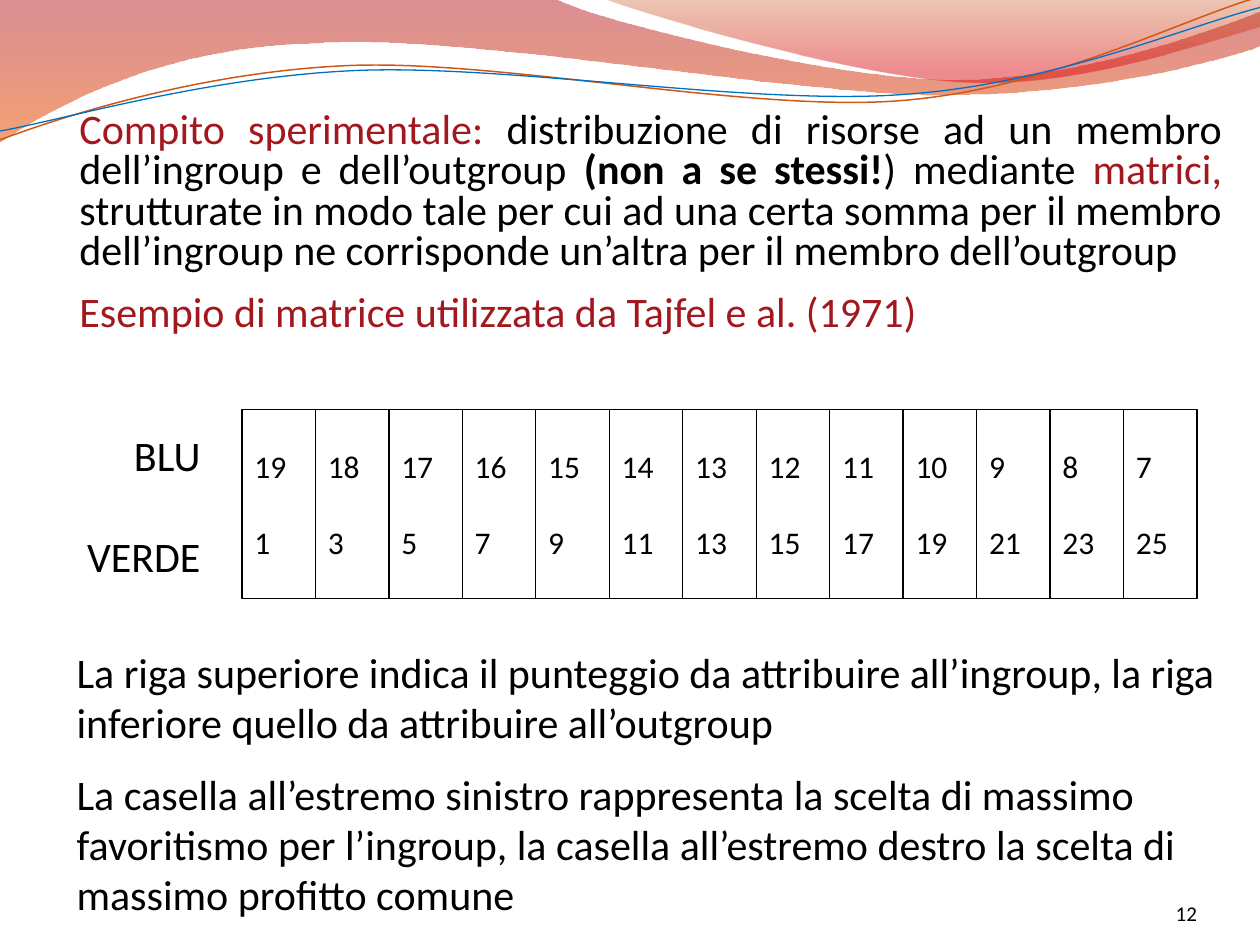
from dataclasses import dataclass
from math import cos, radians, sin

from lxml import etree
from pptx import Presentation
from pptx.dml.color import RGBColor
from pptx.enum.shapes import MSO_SHAPE
from pptx.enum.text import MSO_ANCHOR, MSO_AUTO_SIZE, PP_ALIGN
from pptx.oxml.ns import qn
from pptx.util import Inches, Pt

RECTANGLE = MSO_SHAPE.RECTANGLE
TOP, MIDDLE, BOTTOM = MSO_ANCHOR.TOP, MSO_ANCHOR.MIDDLE, MSO_ANCHOR.BOTTOM
LEFT, RIGHT, JUSTIFY = PP_ALIGN.LEFT, PP_ALIGN.RIGHT, PP_ALIGN.JUSTIFY
NO_AUTOFIT = MSO_AUTO_SIZE.NONE


@dataclass(frozen=True)
class Theme:
    font: str = "Calibri"
    ink: str = "000000"
    accent: str = "A3171E"
    wave_orange: str = "CF5818"
    wave_blue: str = "0070C0"
    body_size: int = 24
    cell_size: int = 18
    number_size: int = 12


THEME = Theme()
WAVE_TILT = 2.7

BAND = [(0, 0), (4.4, -0.01),
        (4.76, 0.17, 6.64, 0.63, 7.58, 0.63), (8.53, 0.63, 9.58, 0.26, 10, 0.09),
        (10.01, 0.36),
        (9.83, 0.44, 8.7, 0.76, 7.46, 0.75), (6.22, 0.75, 3.82, 0.28, 2.57, 0.34),
        (1.29, 0.36, 0.46, 0.83, -0.01, 1.13), (0, 0)]
CREST = [(4.79, -0.01),
         (5.09, 0.11, 6.82, 0.62, 7.69, 0.65), (8.56, 0.69, 9.61, 0.32, 10, 0.21),
         (10, 0), (4.79, -0.01)]
ORANGE_WAVE = [(0, 1.11),
               (0.48, 0.93, 1.58, 0.57, 2.77, 0.52), (3.95, 0.47, 5.93, 0.89, 7.13, 0.8),
               (8.33, 0.71, 9.38, 0.15, 9.98, -0.02)]
BLUE_WAVE = [(0, 1.04),
             (0.47, 0.96, 1.64, 0.61, 2.83, 0.56), (4.03, 0.51, 5.97, 0.84, 7.17, 0.75),
             (8.36, 0.67, 9.41, 0.21, 10, 0.06)]

TASK = [
    ("Compito sperimentale: ", THEME.accent, False),
    ("distribuzione di risorse ad un membro dell’ingroup e dell’outgroup ",
     THEME.ink, False),
    ("(non a se stessi!", THEME.ink, True),
    (") mediante", THEME.ink, False),
    (" matrici, ", THEME.accent, False),
    ("strutturate in modo tale per cui ad una certa somma per il membro "
     "dell’ingroup ne corrisponde un’altra per il membro dell’outgroup",
     THEME.ink, False),
]
EXAMPLE = "Esempio di matrice utilizzata da Tajfel e al. (1971)"
EXPLANATION = [
    "La riga superiore indica il punteggio da attribuire all’ingroup, "
    "la riga inferiore quello da attribuire all’outgroup",
    "La casella all’estremo sinistro rappresenta la scelta di massimo "
    "favoritismo per l’ingroup, la casella all’estremo destro la scelta di "
    "massimo profitto comune",
]
BLUE_SCORES = range(19, 6, -1)
GREEN_SCORES = range(1, 26, 2)


def rgb(color):
    return RGBColor.from_string(color)


def pairs(segment):
    return list(zip(segment[::2], segment[1::2]))


def rotate(segment, center, degrees):
    cx, cy = center
    c, s = cos(radians(degrees)), sin(radians(degrees))
    return tuple(value for x, y in pairs(segment)
                 for value in (cx + (x - cx) * c - (y - cy) * s,
                               cy + (x - cx) * s + (y - cy) * c))


def add_outline(slide, outline, close):
    start, *rest = [(Inches(x), Inches(y))
                    for segment in outline for x, y in pairs(segment)]
    builder = slide.shapes.build_freeform(*start)
    builder.add_line_segments(rest, close=close)
    shape = builder.convert_to_shape()
    shape.shadow.inherit = False
    lines = iter(list(shape._element.iter(qn("a:lnTo"))))
    for segment in outline[1:]:
        line = next(lines)
        if len(segment) == 6:
            line.addprevious(curve := etree.Element(qn("a:cubicBezTo")))
            for part in (line, next(lines), next(lines)):
                curve.append(part[0])
                part.getparent().remove(part)
    return shape


def add_gradient_band(slide, outline, stops):
    band = add_outline(slide, outline, close=True)
    band.line.fill.background()
    band.fill.gradient()
    band.fill.gradient_angle = 270
    for stop, (position, color, _) in zip(band.fill.gradient_stops, stops):
        stop.position = position
        stop.color.rgb = rgb(color)
    for element, (_, _, opacity) in zip(band._element.iter(qn("a:srgbClr")), stops):
        etree.SubElement(element, qn("a:alpha"), val=str(opacity * 1000))


def add_wave(slide, outline, center, color, width):
    level = [rotate(segment, center, WAVE_TILT) for segment in outline]
    wave = add_outline(slide, level, close=False)
    wave.rotation = -WAVE_TILT
    wave.fill.background()
    wave.line.color.rgb = rgb(color)
    wave.line.width = Pt(width)


def style_paragraph(paragraph, size, align=LEFT, color=THEME.ink):
    paragraph.alignment = align
    paragraph.font.name = THEME.font
    paragraph.font.size = Pt(size)
    paragraph.font.color.rgb = rgb(color)


def write_lines(frame, lines, size, align=LEFT, gap=0):
    for index, line in enumerate(lines):
        paragraph = frame.add_paragraph() if index else frame.paragraphs[0]
        paragraph.text = line
        style_paragraph(paragraph, size, align)
        if index:
            paragraph.space_before = Pt(gap)


def add_text(slide, box, lines, size, align=LEFT, gap=0):
    frame = slide.shapes.add_textbox(*map(Inches, box)).text_frame
    frame.word_wrap = True
    write_lines(frame, lines, size, align, gap)
    return frame


def fill_task(body):
    body.left, body.top, body.width, body.height = map(Inches, (0, 0.84, 9.8, 4))
    frame = body.text_frame
    frame.auto_size = NO_AUTOFIT
    frame.vertical_anchor = TOP
    task, example = frame.paragraphs[0], frame.add_paragraph()
    style_paragraph(task, THEME.body_size, JUSTIFY)
    style_paragraph(example, THEME.body_size, color=THEME.accent)
    for text, color, bold in TASK:
        run = task.add_run()
        run.text = text
        run.font.color.rgb = rgb(color)
        run.font.bold = bold
    example.text = EXAMPLE
    for paragraph, gap in ((task, 0), (example, 12.5)):
        paragraph.line_spacing = 0.8
        paragraph.space_before = Pt(gap)
        properties = paragraph._p.get_or_add_pPr()
        properties.set("marL", str(Inches(0.53)))
        properties.set("indent", "0")
        bullet = etree.Element(qn("a:buNone"))
        properties.find(qn("a:spcBef")).addnext(bullet)


def add_score_matrix(slide, left, top, width, height):
    cell_width = width / len(BLUE_SCORES)
    for column, scores in enumerate(zip(BLUE_SCORES, GREEN_SCORES)):
        cell = slide.shapes.add_shape(
            RECTANGLE, Inches(left + column * cell_width), Inches(top),
            Inches(cell_width), Inches(height))
        cell.shadow.inherit = False
        cell.fill.background()
        cell.line.color.rgb = rgb(THEME.ink)
        cell.line.width = Pt(0.75)
        frame = cell.text_frame
        frame.word_wrap = False
        frame.vertical_anchor = MIDDLE
        write_lines(frame, map(str, scores), THEME.cell_size, gap=22)


def main():
    presentation = Presentation()
    presentation.slide_width, presentation.slide_height = Inches(10), Inches(7.5)
    slide = presentation.slides.add_slide(presentation.slide_layouts[1])
    title, body = slide.placeholders
    tree = title._element.getparent()
    tree.remove(title._element)

    add_gradient_band(slide, BAND, [(0, "AF0911", 45), (1, "EE5300", 55)])
    add_gradient_band(slide, CREST, [(0, "C24400", 30), (0.8, "DC000B", 45)])
    add_wave(slide, ORANGE_WAVE, (4.99, 0.58), THEME.wave_orange, 0.85)
    add_wave(slide, BLUE_WAVE, (5, 0.59), THEME.wave_blue, 0.75)

    number = add_text(slide, (8.67, 6.95, 0.83, 0.4), ["12"], THEME.number_size, RIGHT)
    number.vertical_anchor = BOTTOM
    number.margin_left = number.margin_right = number.margin_top = number.margin_bottom = 0

    fill_task(body)
    tree.append(body._element)
    add_text(slide, (0.51, 5.08, 9.24, 2.32), EXPLANATION, THEME.body_size, gap=12)
    add_score_matrix(slide, 1.92, 3.25, 7.58, 1.5)
    add_text(slide, (0.35, 3.36, 1.34, 1.92), ["BLU", "VERDE"], THEME.body_size,
             RIGHT, gap=29)
    presentation.save("out.pptx")


if __name__ == "__main__":
    main()
